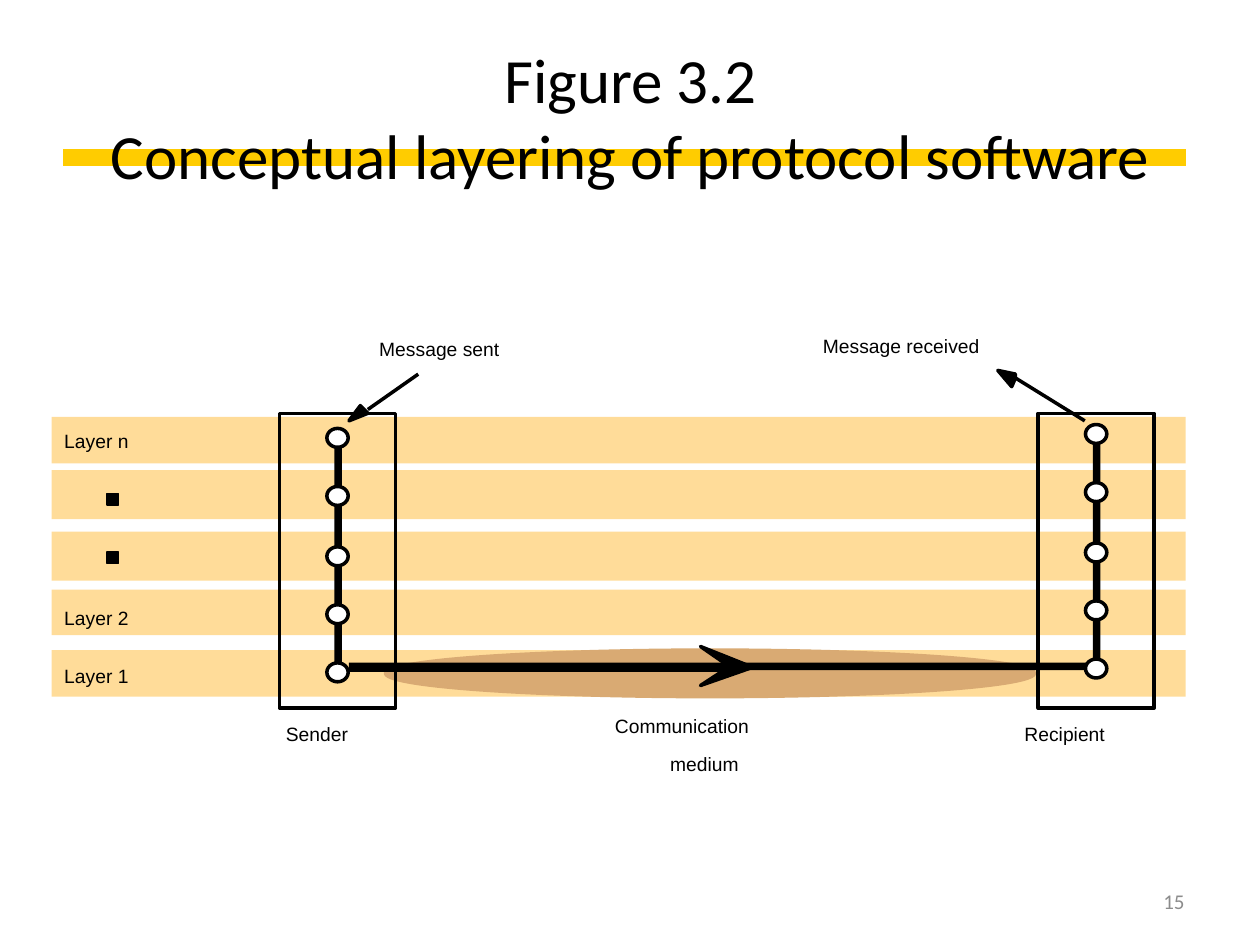
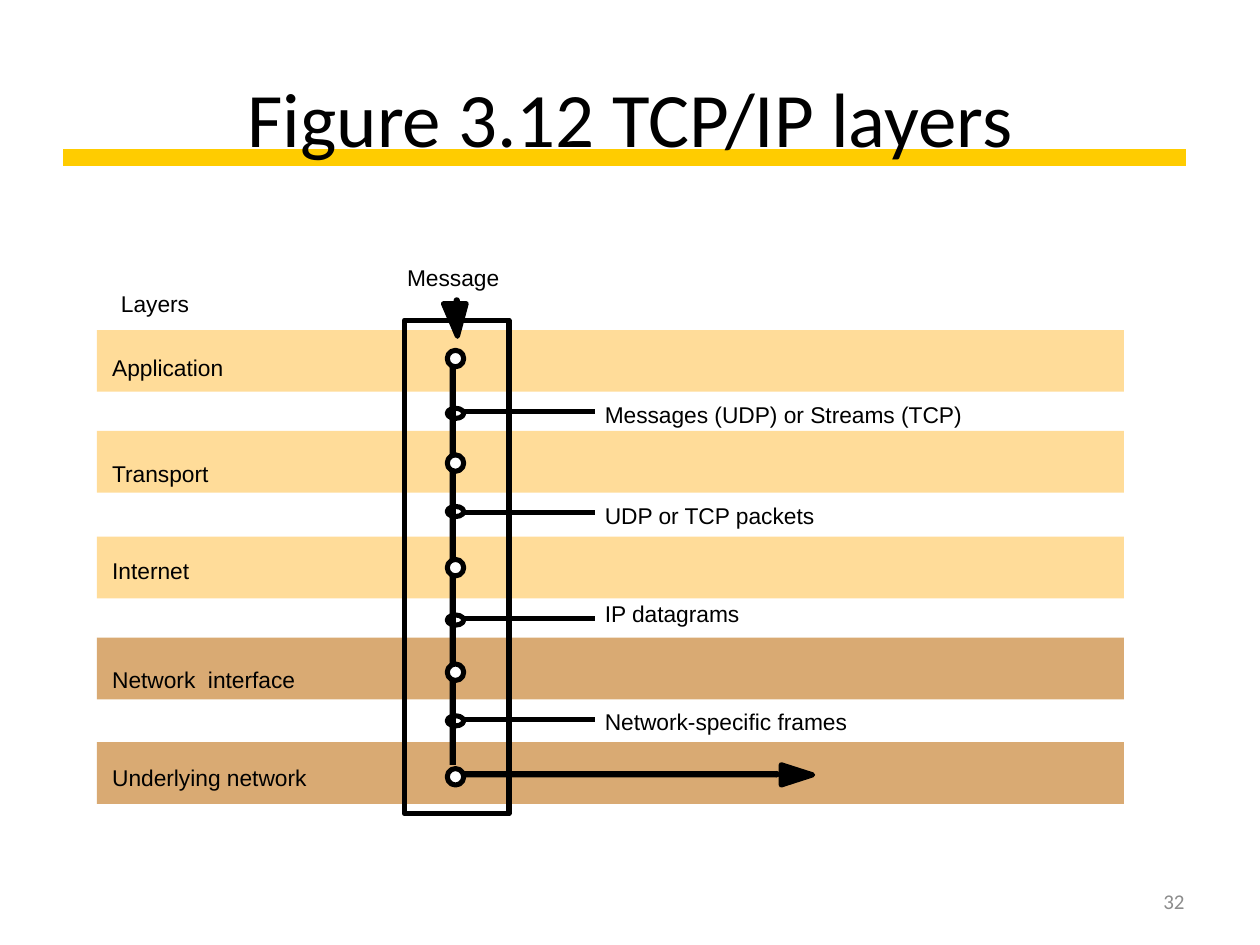
from lxml import etree
from pptx import Presentation
from pptx.dml.color import RGBColor
from pptx.enum import shapes, text
from pptx.oxml.ns import qn
from pptx.util import Pt

C = {"gold": "FFCC00", "sand": "FFDC99", "tan": "D9AA73",
     "black": "000000", "white": "FFFFFF", "grey": "8C8C8C"}
RECT, OVAL = shapes.MSO_SHAPE.RECTANGLE, shapes.MSO_SHAPE.OVAL
LEFT, CENTER, RIGHT = text.PP_ALIGN.LEFT, text.PP_ALIGN.CENTER, text.PP_ALIGN.RIGHT
MIDDLE = text.MSO_ANCHOR.MIDDLE


def draw(s, kind, geo, fill=None, line=None, width=2):
    if kind == "line":
        sp = s.shapes.add_connector(shapes.MSO_CONNECTOR.STRAIGHT, *map(Pt, geo))
        etree.SubElement(sp._element.spPr, qn("a:effectLst"))
    elif kind == "free":
        pts = [(Pt(x), Pt(y)) for x, y in geo]
        fb = s.shapes.build_freeform(*pts[0])
        fb.add_line_segments(pts[1:], close=True)
        sp = fb.convert_to_shape()
    else:
        sp = s.shapes.add_shape(kind, *map(Pt, geo))
    if kind != "line":
        sp.shadow.inherit = False
        if fill:
            sp.fill.solid()
            sp.fill.fore_color.rgb = RGBColor.from_string(C[fill])
        else:
            sp.fill.background()
    if line:
        sp.line.color.rgb = RGBColor.from_string(C[line])
        sp.line.width = Pt(width)
    else:
        sp.line.fill.background()
    return sp


def write(sp, words, size, font="Arial", color="black", align=LEFT,
          margins=(0, 0, 0, 0), anchor=text.MSO_ANCHOR.TOP):
    tf = sp.text_frame
    tf.text = words
    frame = dict(zip(("margin_left", "margin_top", "margin_right", "margin_bottom"), map(Pt, margins)))
    frame.update(word_wrap=True, auto_size=text.MSO_AUTO_SIZE.NONE, vertical_anchor=anchor)
    for k, v in frame.items():
        setattr(tf, k, v)
    p = tf.paragraphs[0]
    p.alignment = align
    for r in p.runs:
        for k, v in {"size": Pt(size), "name": font}.items():
            setattr(r.font, k, v)
        r.font.color.rgb = RGBColor.from_string(C[color])
    for br in p._p.findall(qn("a:br")):
        etree.SubElement(br, qn("a:rPr")).set("sz", str(size * 100))


prs = Presentation()
prs.slide_width, prs.slide_height = Pt(720), Pt(540)

for title, size, number in [
    ("Figure 3.2\vConceptual layering of protocol software", 36, "15"),
    ("Figure 3.12 TCP/IP layers", 44, "32"),
]:
    s = prs.slides.add_slide(prs.slide_layouts[5])
    sp = s.shapes.title
    for k, v in {"left": 36, "top": 21.6, "width": 648, "height": 90}.items():
        setattr(sp, k, Pt(v))
    write(sp, title, size, "Calibri", align=CENTER, margins=(10, 3.6, 9.4, 3.6), anchor=MIDDLE)
    rule = draw(s, "line", (36, 90, 677.5, 90), line="gold", width=10)
    s.shapes._spTree.insert(2, rule._element)
    sp = s.shapes.add_textbox(*map(Pt, (516, 500.5, 168, 28.8)))
    write(sp, number, 12, "Calibri", "grey", RIGHT, (7.2, 3.6, 7.2, 3.6), MIDDLE)

s = prs.slides[0]
for y, h in [(238.3, 26.6), (268.6, 28.1), (303.8, 28.1), (337, 25.9), (371.5, 26.6)]:
    draw(s, RECT, (29.5, y, 648, h), "sand")
draw(s, OVAL, (220.3, 371.5, 370.8, 26.6), "tan", "tan")
draw(s, RECT, (199.4, 378.7, 426.2, 4.3), "black")
draw(s, "free", [(431.3, 380.9), (400.3, 391.7), (416.9, 380.9), (400.3, 369.4), (429.1, 380.9)],
     "black", "black")
draw(s, "line", (199.4, 383, 414.7, 383), line="black")

for words, x, y, w in [
    ("Layer n", 36.7, 245.5, 57), ("Layer 2", 36.7, 346.3, 57), ("Layer 1", 36.7, 379.4, 57),
    ("Message sent", 216.7, 193, 105), ("Message received", 470.2, 190.8, 137),
    ("Communication", 351.4, 408.2, 117), ("medium", 383, 429.8, 60.5),
    ("Sender", 163.4, 412.6, 54.7), ("Recipient", 585.4, 412.6, 70.6),
]:
    write(s.shapes.add_textbox(*map(Pt, (x, y, w, 18.7))), words, 11)

for x, top, head, shaft in [
    (593.3, 242.6, [(580.3, 216), (578.2, 221), (570.2, 211.7), (580.3, 213.8)],
     (619.9, 240.5, 580.3, 216)),
    (159.8, 244.8, [(208.1, 234), (210.2, 236.2), (199.4, 240.5), (205.9, 231.8)],
     (239, 213.8, 210.2, 234)),
]:
    draw(s, RECT, (x, 236.2, 66.2, 168.5), line="black")
    draw(s, RECT, (x + 31.3, 249.1, 4.3, 133.9), "black")
    for dy in (0, 33.2, 67.7, 100.8, 134):
        draw(s, OVAL, (x + 27, top + dy, 12.2, 10.8), "white", "black")
    draw(s, "free", head, "black", "black")
    draw(s, "line", shaft, line="black")

for y in (282.2, 315.4):
    draw(s, RECT, (61.2, y, 6.5, 6.5), "black", "black", 0.75)

s = prs.slides[1]
W = 2.88
layers = [
    ("Application", 188.6, 202.3, "sand"), ("Transport", 246.2, 262.8, "sand"),
    ("Internet", 306.7, 318.2, "sand"), ("Network  interface", 364.3, 380.2, "tan"),
    ("Underlying network", 424.1, 436.3, "tan"),
]
for name, y, label_y, color in layers:
    draw(s, RECT, (55.4, y, 586.8, 35.3), color)
draw(s, RECT, (231.1, 182.9, 59.8, 282.2), line="black", width=W)
draw(s, RECT, (257, 207.4, 3.6, 229.7), "black")

units = [
    ("Messages (UDP) or Streams (TCP)", 229, 235.4, 233.3),
    ("UDP or TCP packets", 286.6, 293, 289.4),
    ("IP datagrams", 342.7, 353.5, 351.4),
    ("Network-specific frames", 404.6, 411.1, 409),
]
labels = [("Message", 232.6, 150.5), ("Layers", 69.1, 165.6)]
labels += [(name, 64.1, label_y) for name, y, label_y, color in layers]
labels += [(name, 345.6, label_y) for name, label_y, y, ring_y in units]
for words, x, y in labels:
    write(s.shapes.add_textbox(*map(Pt, (x, y, 241 if x > 300 else 132, 16.6))), words, 13)

for name, label_y, y, ring_y in units:
    draw(s, "line", (339.8, y, 265, y), line="black", width=W)
    draw(s, OVAL, (255.6, ring_y, 9.4, 5.8), line="black", width=W)

for x, y, head in [
    (259.2, 169.9, [(261.4, 173.5), (266.4, 173.5), (261.4, 192.2), (253.4, 173.5)]),
    (442.1, 440.6, [(446.4, 442.8), (446.4, 437), (464.4, 442.8), (446.4, 448.6)]),
]:
    draw(s, OVAL, (x, y, 3.6, 3.6), "black")
    draw(s, "free", head, "black", "black", W)
draw(s, RECT, (259.2, 440.6, 185, 3.6), "black")
for i in range(len(layers)):
    draw(s, OVAL, (255.6, 200.2 + 59.75 * i, 9.4, 9.4), "white", "black", W)

prs.save("out.pptx")
